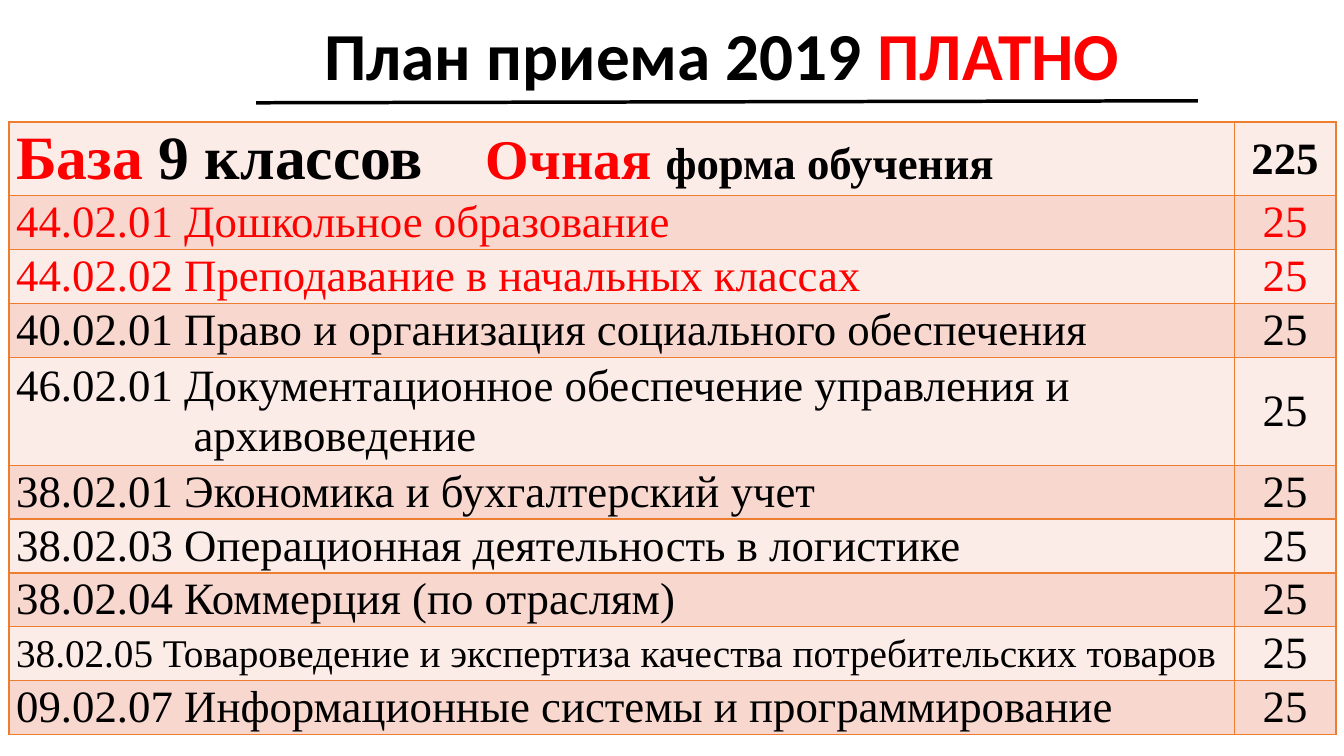
"""Build the 2019 paid admission plan slide."""
from dataclasses import dataclass

from lxml import etree
from pptx import Presentation, util as u
from pptx.dml.color import RGBColor
from pptx.enum import shapes, text
from pptx.oxml.ns import qn


@dataclass(frozen=True)
class Theme:
    black: str = "000000"
    red: str = "FF0000"
    border: str = "ED7D31"
    bands: tuple = ("FCECE8", "F8D7CE")
    title_font: str = "Calibri"
    table_font: str = "Times New Roman"
    title: int = 48
    base: int = 44
    form: int = 40
    body: int = 32
    small: int = 28


T = Theme()
WIDTH, HEIGHT = 13.33, 7.5
TITLE = [("План приема 2019 ", T.title, T.black), ("ПЛАТНО", T.title, T.red)]
TITLE_BOX = (2.58, 0.08, 9.16, 0.91)
RULE = (2.54, 1.02, 11.88, 1)
HEADER = [
    ("База ", T.base, T.red),
    ("9 классов\t", T.base, T.black),
    ("Очная ", T.form, T.red),
    ("форма обучения", T.body, T.black),
]
HEADER_TAB = 4.66
PLACES = 25
PROGRAMMES = [
    ("44.02.01 Дошкольное образование", T.body, T.red, 0),
    ("44.02.02 Преподавание в начальных классах", T.body, T.red, 0),
    ("40.02.01 Право и организация социального обеспечения", T.body, T.black, 0),
    ("46.02.01 Документационное обеспечение управления и архивоведение", T.body, T.black, 1.76),
    ("38.02.01 Экономика и бухгалтерский учет", T.body, T.black, 0),
    ("38.02.03 Операционная деятельность в логистике", T.body, T.black, 0),
    ("38.02.04 Коммерция (по отраслям)", T.body, T.black, 0),
    ("38.02.05 Товароведение и экспертиза качества потребительских товаров", T.small, T.black, 1.47),
    ("09.02.07 Информационные системы и программирование", T.body, T.black, 0),
]
TABLE_LEFT, TABLE_TOP, TABLE_HEIGHT = 0.09, 1.21, 6.07
COLUMNS = (12.15, 1.01)
HEADER_ROW, TWO_LINE_ROW, TWO_LINE_INDEX = 0.73, 1.06, 4


def write(p, runs, font, bold=False, centred=False):
    p.alignment = text.PP_ALIGN.CENTER if centred else text.PP_ALIGN.LEFT
    for words, size, colour in runs:
        r = p.add_run()
        r.text = words
        r.font.name, r.font.size, r.font.bold = font, u.Pt(size), bold
        r.font.color.rgb = RGBColor.from_string(colour)


def fill_cell(cell, band, runs, bold, centred):
    cell.margin_left = cell.margin_right = u.Inches(0.07)
    cell.margin_top = cell.margin_bottom = 0
    cell.vertical_anchor = text.MSO_ANCHOR.MIDDLE
    tc_pr = cell._tc.get_or_add_tcPr()
    for side in ("lnL", "lnR", "lnT", "lnB"):
        ln = etree.SubElement(tc_pr, qn(f"a:{side}"), w=str(u.Pt(1)))
        solid = etree.SubElement(ln, qn("a:solidFill"))
        etree.SubElement(solid, qn("a:srgbClr"), val=T.border)
    cell.fill.solid()
    cell.fill.fore_color.rgb = RGBColor.from_string(band)
    p = cell.text_frame.paragraphs[0]
    write(p, runs, T.table_font, bold, centred)
    return p._p.get_or_add_pPr()


def add_title(s):
    x1, y1, x2, y2 = map(u.Inches, RULE)
    line = s.shapes.add_connector(shapes.MSO_CONNECTOR.STRAIGHT, x1, y1, x2, y2)
    line.line.width = u.Pt(2.5)
    line.line.color.rgb = RGBColor.from_string(T.black)
    etree.SubElement(line._element.spPr, qn("a:effectLst"))
    tf = s.shapes.add_textbox(*map(u.Inches, TITLE_BOX)).text_frame
    tf.word_wrap = True
    write(tf.paragraphs[0], TITLE, T.title_font, bold=True, centred=True)


def add_plan(s):
    count = len(PROGRAMMES) + 1
    box = map(u.Inches, (TABLE_LEFT, TABLE_TOP, sum(COLUMNS), TABLE_HEIGHT))
    table = s.shapes.add_table(count, len(COLUMNS), *box).table
    for column, width in zip(table.columns, COLUMNS):
        column.width = u.Inches(width)
    special = {0: HEADER_ROW, TWO_LINE_INDEX: TWO_LINE_ROW}
    plain = (TABLE_HEIGHT - sum(special.values())) / (count - len(special))
    total = PLACES * len(PROGRAMMES)
    rows = [(HEADER, total, T.black, 0)]
    rows += [([(name, size, colour)], PLACES, colour, hang)
             for name, size, colour, hang in PROGRAMMES]
    for i, (runs, places, colour, hang) in enumerate(rows):
        table.rows[i].height = u.Inches(special.get(i, plain))
        band, bold = T.bands[i % 2], i == 0
        p_pr = fill_cell(table.cell(i, 0), band, runs, bold, False)
        fill_cell(table.cell(i, 1), band, [(str(places), T.body, colour)], bold, True)
        if hang:
            p_pr.set("marL", str(u.Inches(hang)))
            p_pr.set("indent", str(-u.Inches(hang)))
        if bold:
            tabs = etree.SubElement(p_pr, qn("a:tabLst"))
            etree.SubElement(tabs, qn("a:tab"), pos=str(u.Inches(HEADER_TAB)), algn="l")


def main():
    prs = Presentation()
    prs.slide_width, prs.slide_height = u.Inches(WIDTH), u.Inches(HEIGHT)
    s = prs.slides.add_slide(prs.slide_layouts[6])
    add_title(s)
    add_plan(s)
    prs.save("out.pptx")


if __name__ == "__main__":
    main()
